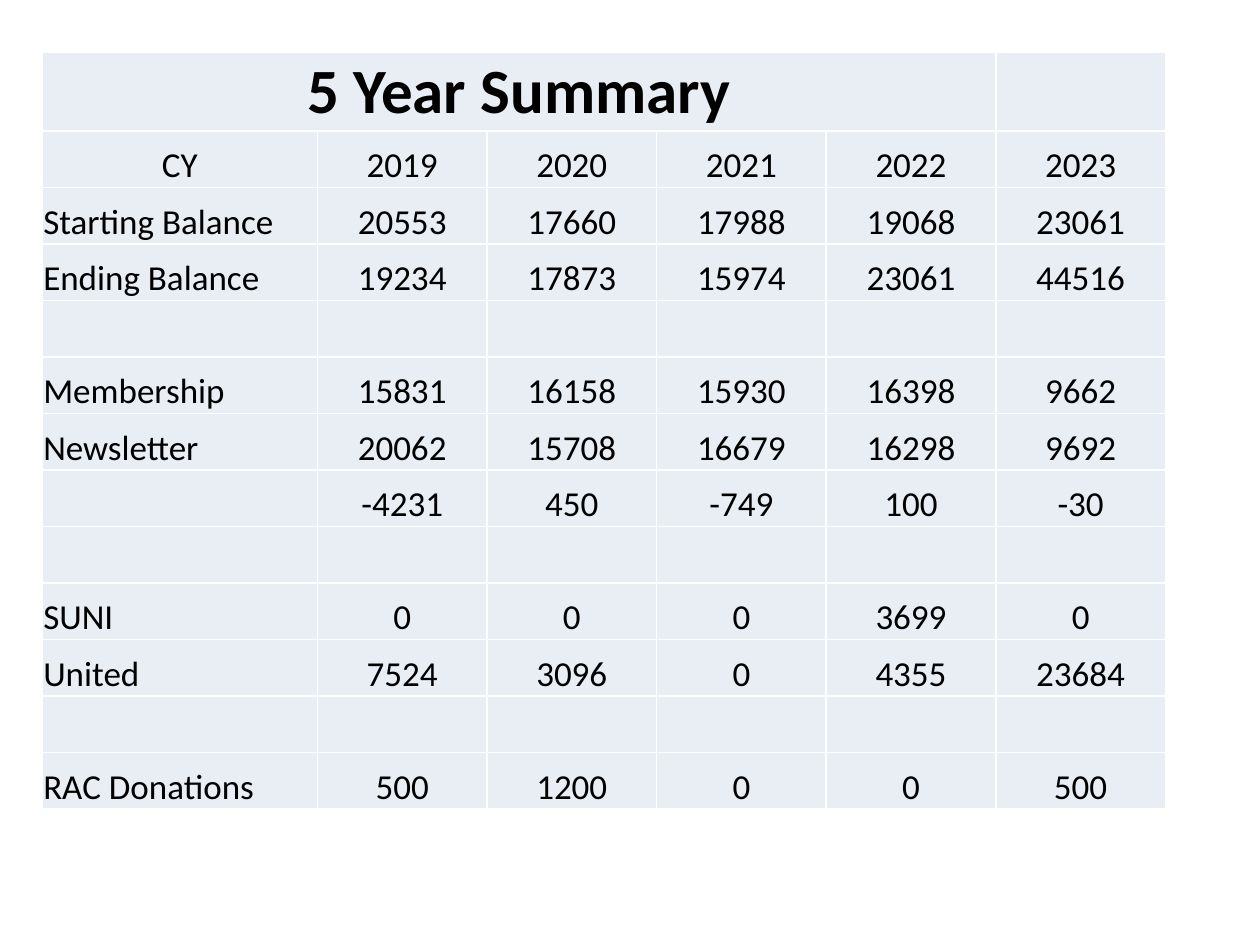
from lxml import etree
from pptx import Presentation
from pptx.dml.color import RGBColor
from pptx.enum import text
from pptx.oxml import ns
from pptx.util import Pt

BLACK = RGBColor(0x00, 0x00, 0x00)
WHITE = RGBColor(0xFF, 0xFF, 0xFF)
PALE_BLUE = RGBColor(0xE9, 0xED, 0xF4)
FONT = "Calibri"

TITLE = "5 Year Summary"
YEARS = ["CY", 2019, 2020, 2021, 2022, 2023]
BALANCES = [
    ["Starting Balance", 20553, 17660, 17988, 19068, 23061],
    ["Ending Balance", 19234, 17873, 15974, 23061, 44516],
    [],
    ["Membership", 15831, 16158, 15930, 16398, 9662],
    ["Newsletter", 20062, 15708, 16679, 16298, 9692],
    ["", -4231, 450, -749, 100, -30],
    [],
    ["SUNI", 0, 0, 0, 3699, 0],
    ["United", 7524, 3096, 0, 4355, 23684],
    [],
    ["RAC Donations", 500, 1200, 0, 0, 500],
]


def style_cell(cell):
    """Thin white borders on every side and a pale fill."""
    properties = cell._tc.get_or_add_tcPr()
    for side in ("lnL", "lnR", "lnT", "lnB"):
        border = etree.SubElement(properties, ns.qn(f"a:{side}"), w=str(Pt(1)))
        fill = etree.SubElement(border, ns.qn("a:solidFill"))
        etree.SubElement(fill, ns.qn("a:srgbClr"), val=str(WHITE))
    cell.fill.solid()
    cell.fill.fore_color.rgb = PALE_BLUE


def write_cell(cell, content, size, align, bold=False):
    cell.margin_left = cell.margin_right = cell.margin_top = Pt(0.72)
    cell.margin_bottom = Pt(0)
    cell.vertical_anchor = text.MSO_ANCHOR.BOTTOM
    paragraph = cell.text_frame.paragraphs[0]
    paragraph.text = str(content)
    paragraph.alignment = align
    font = paragraph.font
    font.name, font.size, font.bold = FONT, Pt(size), bold
    font.color.rgb = BLACK


def add_summary_table(slide, left, top, width, height):
    lines = [YEARS] + BALANCES
    row_count, column_count = len(lines) + 1, len(YEARS)
    table = slide.shapes.add_table(
        row_count, column_count, left, top, width, height).table
    table.first_row = table.horz_banding = False

    # Wide label column, equal year columns
    label_width = Pt(157.4)
    table.columns[0].width = label_width
    for year in range(1, column_count):
        table.columns[year].width = (width - label_width) // (column_count - 1)

    for cell in table.iter_cells():
        style_cell(cell)

    # Title across all but the last column
    title = table.cell(0, 0)
    title.merge(table.cell(0, column_count - 2))
    write_cell(title, TITLE, 36, text.PP_ALIGN.CENTER, bold=True)

    # Year headings and amounts
    for row, line in enumerate(lines, start=1):
        for column, content in enumerate(line):
            if content == "":
                continue
            is_label = column == 0 and row > 1
            align = text.PP_ALIGN.LEFT if is_label else text.PP_ALIGN.CENTER
            write_cell(table.cell(row, column), content, 20, align)


def main():
    presentation = Presentation()
    presentation.slide_width, presentation.slide_height = Pt(720), Pt(540)
    slide = presentation.slides.add_slide(presentation.slide_layouts[6])
    add_summary_table(slide, Pt(24), Pt(30), Pt(642), Pt(420))
    presentation.save("out.pptx")


if __name__ == "__main__":
    main()
